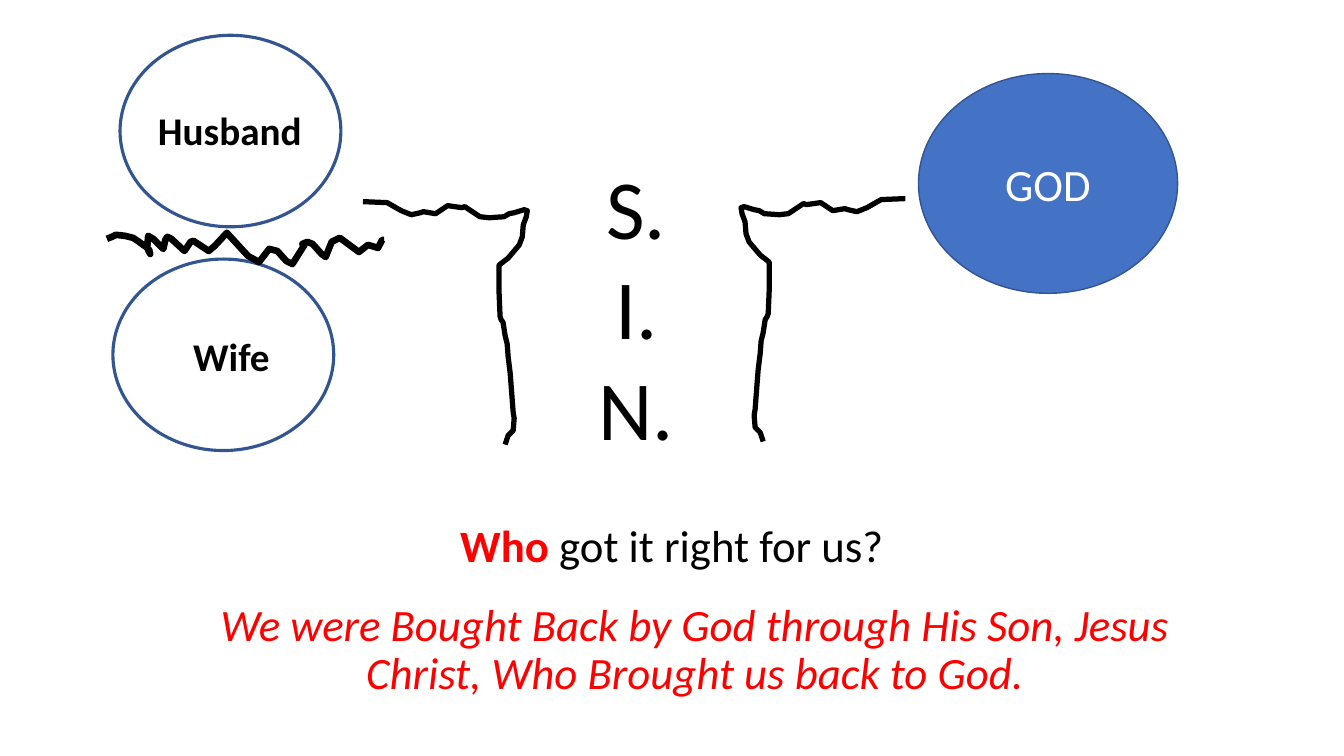
from dataclasses import dataclass

from pptx import Presentation
from pptx.dml.color import RGBColor
from pptx.enum.shapes import MSO_SHAPE
from pptx.enum.text import MSO_ANCHOR, PP_ALIGN
from pptx.shapes.autoshape import Shape
from pptx.slide import Slide
from pptx.text.text import TextFrame, _Paragraph
from pptx.util import Inches, Pt

SLIDE_WIDTH = Inches(13.33)
SLIDE_HEIGHT = Inches(7.5)
STROKE_UNIT = Inches(0.01)
FONT = "Calibri"
COLORS = {"black": "000000", "white": "FFFFFF", "red": "FF0000",
          "blue": "4472C4", "outline": "325491"}

Points = list[tuple[int, int]]


@dataclass(frozen=True)
class Area:
    """Percentages of the slide's width and height."""
    left: float
    top: float
    width: float
    height: float

    def lengths(self) -> tuple[int, int, int, int]:
        return (int(SLIDE_WIDTH * self.left / 100), int(SLIDE_HEIGHT * self.top / 100),
                int(SLIDE_WIDTH * self.width / 100), int(SLIDE_HEIGHT * self.height / 100))


@dataclass(frozen=True)
class Oval:
    area: Area
    line_width: float
    fill: str | None = None
    text: str = ""


@dataclass(frozen=True)
class Label:
    area: Area
    lines: tuple[str, ...]
    size: int
    color: str = "black"
    bold: bool = False
    italic: bool = False
    wrap: bool = False
    spacing: float = 1.0


@dataclass(frozen=True)
class Stroke:
    left: float
    top: float
    points: Points
    line_width: float


CRACK: Points = [
    (0, 6), (5, 4), (9, 2), (18, 3), (26, 5), (32, 9), (36, 12), (39, 14), (42, 17),
    (43, 21), (40, 15), (41, 3), (46, 6), (56, 16), (58, 7), (60, 4), (64, 6), (77, 18),
    (83, 9), (86, 8), (101, 18), (107, 13), (119, 0), (140, 23), (151, 29), (161, 16),
    (169, 18), (178, 28), (184, 31), (196, 12), (194, 11), (199, 9), (204, 11), (213, 21),
    (217, 24), (223, 9), (231, 5), (250, 19), (259, 12), (269, 15), (273, 7), (275, 7)]
LEFT_CLIFF: Points = [
    (0, 0), (24, 1), (38, 9), (48, 13), (57, 11), (60, 10), (72, 12), (84, 4), (98, 6),
    (101, 5), (116, 15), (125, 16), (140, 15), (145, 12), (150, 11), (160, 8), (163, 9),
    (162, 15), (159, 23), (158, 35), (155, 43), (144, 56), (135, 63), (135, 90),
    (136, 114), (137, 117), (139, 120), (141, 133), (143, 141), (144, 154), (146, 170),
    (149, 209), (150, 215), (149, 227), (144, 232), (141, 241)]
CLIFF_WIDTH = max(x for x, _ in LEFT_CLIFF)
RIGHT_CLIFF: Points = [(CLIFF_WIDTH - x, y) for x, y in LEFT_CLIFF]

TITLE_AREA = Area(12.5, 41.6, 75, 34.8)
OVALS = [
    Oval(Area(68.34, 9.73, 19.28, 29.07), 1, "blue", "GOD"),
    Oval(Area(8.4, 34.27, 16.43, 25.33), 2.25),
    Oval(Area(8.93, 4.67, 16.43, 25.33), 2.25),
]
STROKES = [
    Stroke(7.95, 30.8, CRACK, 4.75),
    Stroke(27.01, 26.67, LEFT_CLIFF, 3.75),
    Stroke(55.14, 26.27, RIGHT_CLIFF, 3.75),
]
LABELS = [
    Label(Area(12.5, 79.07, 78.45, 17.33),
          ("We were Bought Back by God through His Son, Jesus Christ, "
           "Who Brought us back to God.",),
          32, "red", italic=True, wrap=True, spacing=0.9),
    Label(Area(10.95, 13.47, 12.3, 7.6), ("Husband",), 28, bold=True),
    Label(Area(13.58, 43.33, 7.28, 7.6), ("Wife",), 28, bold=True),
    Label(Area(43.74, 19.87, 7.2, 41.73), ("S.", "I.", "N."), 60),
]


def rgb(name: str) -> RGBColor:
    return RGBColor.from_string(COLORS[name])


def add_text(para: _Paragraph, text: str, *, size: float, color: str,
             bold: bool = False, italic: bool = False, spacing: float = 1.0) -> None:
    para.alignment = PP_ALIGN.CENTER
    para.line_spacing = spacing
    span = para.add_run()
    span.text = text
    span.font.name = FONT
    span.font.size = Pt(size)
    span.font.bold = bold
    span.font.italic = italic
    span.font.color.rgb = rgb(color)


def outline(shape: Shape, color: str, width: float, fill: str | None = None) -> None:
    shape.shadow.inherit = False
    shape.line.color.rgb = rgb(color)
    shape.line.width = Pt(width)
    if fill:
        shape.fill.solid()
        shape.fill.fore_color.rgb = rgb(fill)
    else:
        shape.fill.background()


def draw_title(page: Slide) -> None:
    title = page.shapes.title
    title.left, title.top, title.width, title.height = TITLE_AREA.lengths()
    frame = title.text_frame
    frame.vertical_anchor = MSO_ANCHOR.BOTTOM
    para = frame.paragraphs[0]
    add_text(para, "Who ", size=32, color="red", bold=True, spacing=0.9)
    add_text(para, "got it right for us?", size=32, color="black", spacing=0.9)


def draw_oval(page: Slide, oval: Oval) -> None:
    shape = page.shapes.add_shape(MSO_SHAPE.OVAL, *oval.area.lengths())
    outline(shape, "outline", oval.line_width, oval.fill)
    if oval.text:
        frame = shape.text_frame
        frame.vertical_anchor = MSO_ANCHOR.MIDDLE
        add_text(frame.paragraphs[0], oval.text, size=32, color="white")


def draw_stroke(page: Slide, stroke: Stroke) -> None:
    left, top, _, _ = Area(stroke.left, stroke.top, 0, 0).lengths()
    start, *rest = stroke.points
    builder = page.shapes.build_freeform(*start, scale=STROKE_UNIT)
    builder.add_line_segments(rest, close=False)
    outline(builder.convert_to_shape(left, top), "black", stroke.line_width)


def draw_label(page: Slide, label: Label) -> None:
    box = page.shapes.add_textbox(*label.area.lengths())
    frame: TextFrame = box.text_frame
    frame.word_wrap = label.wrap
    for index, line in enumerate(label.lines):
        para = frame.add_paragraph() if index else frame.paragraphs[0]
        add_text(para, line, size=label.size, color=label.color, bold=label.bold,
                 italic=label.italic, spacing=label.spacing)


def main() -> None:
    deck = Presentation()
    deck.slide_width = SLIDE_WIDTH
    deck.slide_height = SLIDE_HEIGHT
    page = deck.slides.add_slide(deck.slide_layouts.get_by_name("Title Only"))
    draw_title(page)
    for oval in OVALS:
        draw_oval(page, oval)
    for stroke in STROKES:
        draw_stroke(page, stroke)
    for label in LABELS:
        draw_label(page, label)
    deck.save("out.pptx")


if __name__ == "__main__":
    main()
